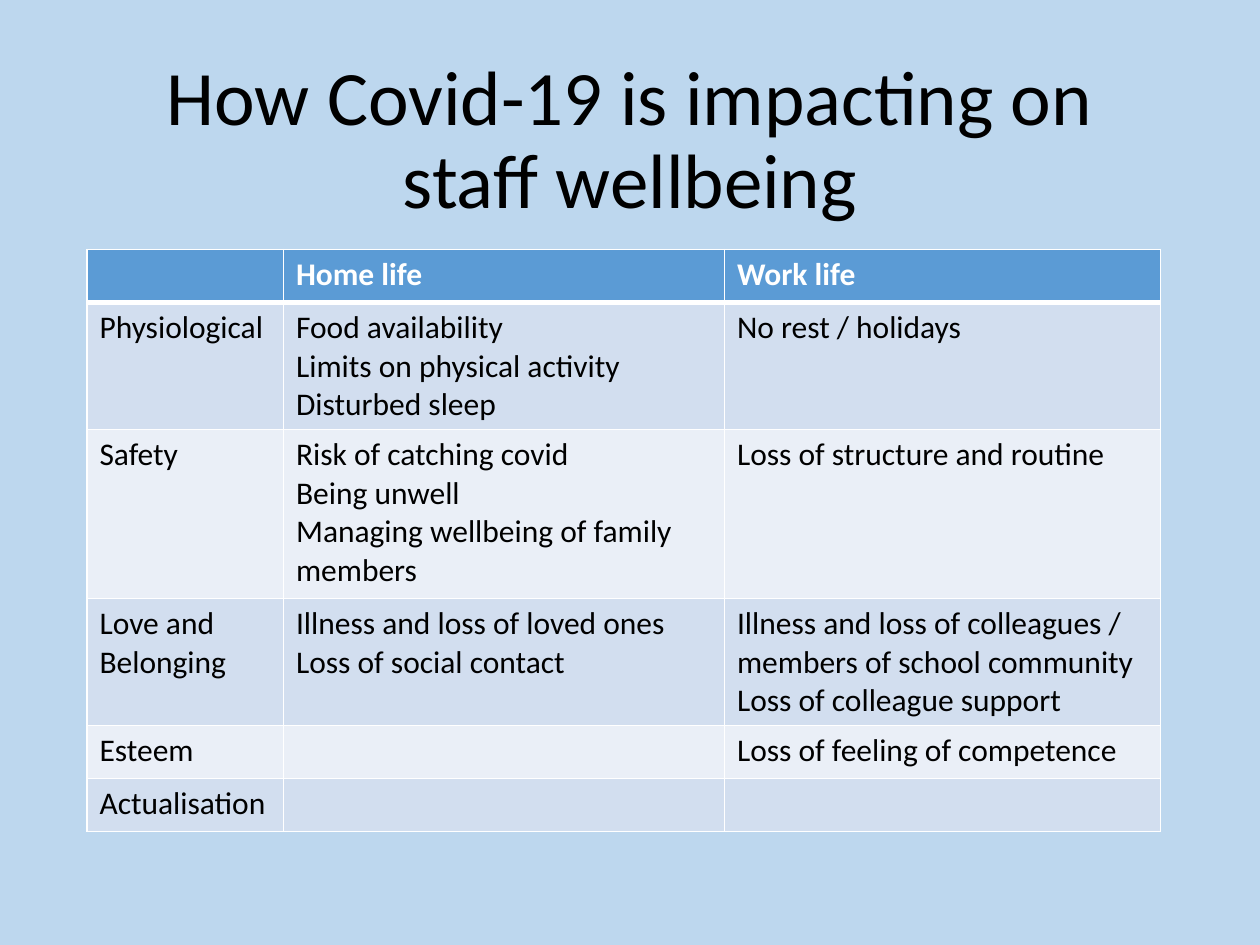
from typing import NamedTuple

import pptx
import pptx.dml.color
import pptx.enum.text
import pptx.oxml
import pptx.oxml.ns
import pptx.util
from pptx.util import Inches

FONT = "Calibri"
BACKGROUND, HEADER = "BDD7EE", "5B9BD5"
BANDS = ("D2DEEF", "EAEFF7")
WHITE, BLACK = "FFFFFF", "000000"
COLUMN_WIDTHS = (1.56, 3.5, 3.46)
HEADER_HEIGHT = 0.42


class Need(NamedTuple):
    name: str
    home: tuple[str, ...]
    work: tuple[str, ...]
    height: float


NEEDS = (
    Need("Physiological",
         ("Food availability", "Limits on physical activity", "Disturbed sleep"),
         ("No rest / holidays",), 1.01),
    Need("Safety",
         ("Risk of catching covid", "Being unwell",
          "Managing wellbeing of family members"),
         ("Loss of structure and routine",), 1.34),
    Need("Love and Belonging",
         ("Illness and loss of loved ones", "Loss of social contact"),
         ("Illness and loss of colleagues / members of school community",
          "Loss of colleague support"), 1.01),
    Need("Esteem", (), ("Loss of feeling of competence",), 0.42),
    Need("Actualisation", (), (), 0.42),
)


def paint(fill, colour: str) -> None:
    fill.solid()
    fill.fore_color.rgb = pptx.dml.color.RGBColor.from_string(colour)


def write(frame, *lines: str, size: float = 18, colour: str = BLACK,
          bold: bool = False, align=None, spacing: float | None = None) -> None:
    """Put each line in its own paragraph of the text frame."""
    frame.word_wrap = True
    for number, line in enumerate(lines):
        paragraph = frame.add_paragraph() if number else frame.paragraphs[0]
        paragraph.alignment = align
        paragraph.line_spacing = spacing
        run = paragraph.add_run()
        run.text = line
        run.font.name = FONT
        run.font.size = pptx.util.Pt(size)
        run.font.bold = bold
        paint(run.font.fill, colour)


def add_borders(cell, **widths: float) -> None:
    """Draw white cell borders; the sides are named L, R, T and B."""
    properties = cell._tc.get_or_add_tcPr()
    for side, width in widths.items():
        properties.append(pptx.oxml.parse_xml(
            f'<a:ln{side} {pptx.oxml.ns.nsdecls("a")} w="{pptx.util.Pt(width)}">'
            f'<a:solidFill><a:srgbClr val="{WHITE}"/></a:solidFill></a:ln{side}>'))


def add_title(slide, text: str) -> None:
    title = slide.shapes.add_textbox(
        Inches(0.69), Inches(0.4), Inches(8.62), Inches(1.45))
    paint(title.fill, BACKGROUND)
    title.text_frame.vertical_anchor = pptx.enum.text.MSO_ANCHOR.MIDDLE
    write(title.text_frame, text, size=44, spacing=0.9,
          align=pptx.enum.text.PP_ALIGN.CENTER)


def add_needs_table(slide, needs: tuple[Need, ...]) -> None:
    heights = [HEADER_HEIGHT, *(need.height for need in needs)]
    table = slide.shapes.add_table(
        len(heights), len(COLUMN_WIDTHS), Inches(0.69), Inches(1.98),
        Inches(sum(COLUMN_WIDTHS)), Inches(sum(heights))).table
    for column, width in zip(table.columns, COLUMN_WIDTHS):
        column.width = Inches(width)
    for row, height in zip(table.rows, heights):
        row.height = Inches(height)

    contents = [((), ("Home life",), ("Work life",))]
    contents += [((need.name,), need.home, need.work) for need in needs]
    for row_number, row_contents in enumerate(contents):
        is_header = row_number == 0
        band = HEADER if is_header else BANDS[(row_number - 1) % 2]
        for column_number, lines in enumerate(row_contents):
            cell = table.cell(row_number, column_number)
            add_borders(cell, L=1, R=1, T=3 if row_number == 1 else 1,
                        B=3 if is_header else 1)
            paint(cell.fill, band)
            write(cell.text_frame, *lines, bold=is_header,
                  colour=WHITE if is_header else BLACK)


def main() -> None:
    presentation = pptx.Presentation()
    presentation.slide_width = Inches(10)
    presentation.slide_height = Inches(7.5)
    slide = presentation.slides.add_slide(presentation.slide_layouts[6])
    paint(slide.background.fill, BACKGROUND)
    add_title(slide, "How Covid-19 is impacting on staff wellbeing")
    add_needs_table(slide, NEEDS)
    presentation.save("out.pptx")


if __name__ == "__main__":
    main()
